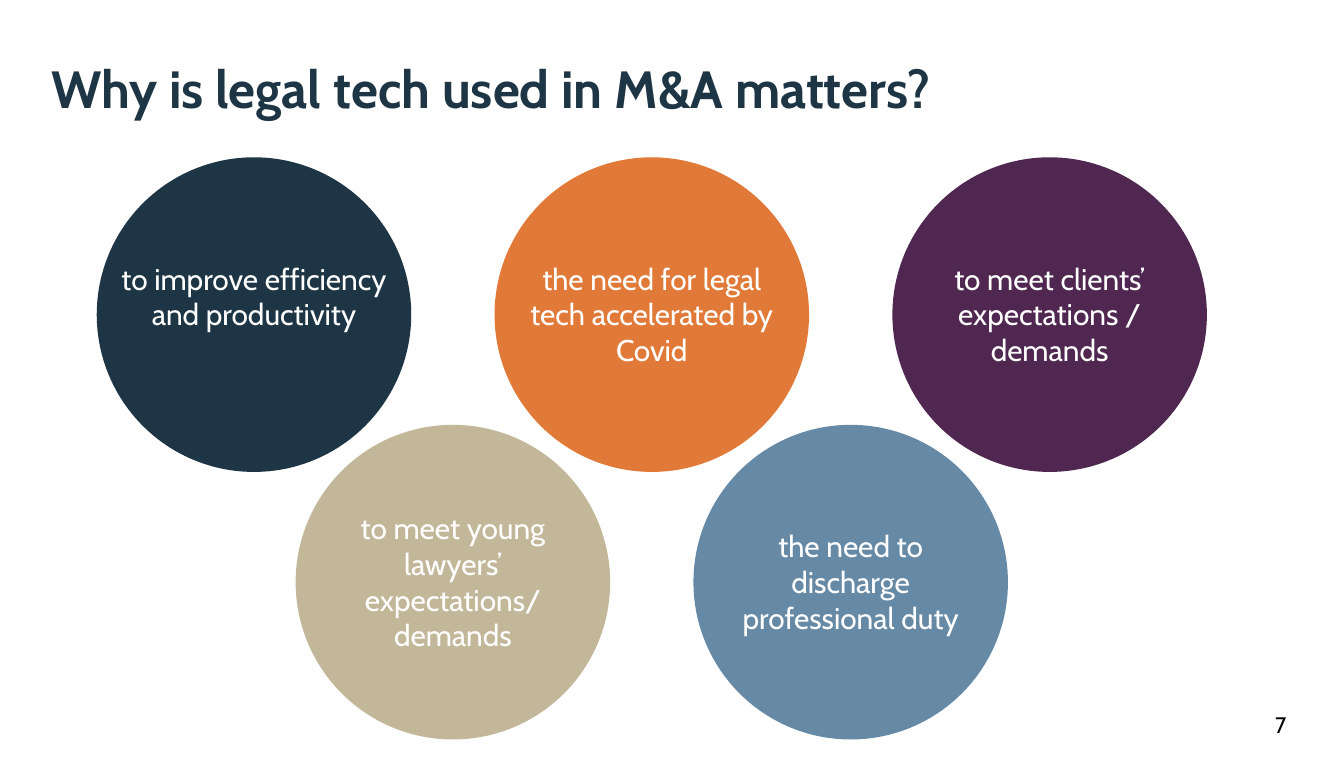
from pptx import Presentation, util as u
from pptx.dml.color import RGBColor
from pptx.enum import shapes, text

WIDTH, HEIGHT = 10, 5.63
DIAMETER = 2.34
LEFT, COLUMN_STEP = 0.72, 1.48
TOP, ROW_STEP = 1.17, 1.99
LINE_HEIGHT = 0.27
FONT = "Cabin"
NAVY, WHITE, PURPLE = "1D3544", "FFFFFF", "4F2750"

REASONS = [
    (1, 1, "C2B799", "to meet young lawyers’ expectations/ demands", 1.69, 4),
    (2, 0, "E17A38", "the need for legal tech accelerated by Covid", 1.83, 3),
    (4, 0, PURPLE, "to meet clients’ expectations / demands", 1.66, 3),
    (3, 1, "668AA6", "the need to discharge professional duty", 1.73, 3),
    (0, 0, NAVY, "to improve efficiency and productivity", 2.1, 3),
]


def color(value):
    return RGBColor.from_string(value)


def box(left, top, width, height):
    return [u.Inches(length) for length in (left, top, width, height)]


def write(frame, wording, size, ink, align, bold=False, inset=0):
    frame.word_wrap = True
    frame.auto_size = text.MSO_AUTO_SIZE.NONE
    frame.margin_left = frame.margin_right = u.Inches(inset)
    frame.margin_top = frame.margin_bottom = u.Inches(inset / 2)
    paragraph = frame.paragraphs[0]
    paragraph.alignment = align
    run = paragraph.add_run()
    run.text = wording
    run.font.name = FONT
    run.font.size = u.Pt(size)
    run.font.bold = bold
    run.font.color.rgb = color(ink)
    return paragraph


def add_title(slide, wording):
    title = slide.shapes.title
    title.left, title.top, title.width, title.height = box(0.38, 0.35, 9.29, 0.61)
    title.text_frame.vertical_anchor = text.MSO_ANCHOR.MIDDLE
    write(title.text_frame, wording, 28, NAVY, text.PP_ALIGN.LEFT, bold=True)


def add_reason(slide, column, row, fill, wording, width, lines):
    left = LEFT + column * COLUMN_STEP
    top = TOP + row * ROW_STEP
    group = slide.shapes.add_group_shape()
    circle = group.shapes.add_shape(
        shapes.MSO_SHAPE.OVAL, *box(left, top, DIAMETER, DIAMETER))
    circle.shadow.inherit = False
    circle.fill.solid()
    circle.fill.fore_color.rgb = color(fill)
    circle.line.fill.background()

    height = lines * LINE_HEIGHT
    caption = group.shapes.add_textbox(*box(
        left + (DIAMETER - width) / 2, top + (DIAMETER - height) / 2, width, height))
    if fill == PURPLE:
        caption.fill.solid()
        caption.fill.fore_color.rgb = color(fill)
    paragraph = write(caption.text_frame, wording, 16, WHITE, text.PP_ALIGN.CENTER)
    paragraph.space_after = u.Pt(6)


def add_page_number(slide, number):
    page = slide.shapes.add_textbox(*box(6.8, 5.24, 2.87, 0.17))
    write(page.text_frame, number, 12, "000000", text.PP_ALIGN.RIGHT, inset=0.1)


def main():
    deck = Presentation()
    deck.slide_width, deck.slide_height = u.Inches(WIDTH), u.Inches(HEIGHT)
    slide = deck.slides.add_slide(deck.slide_layouts[5])
    for reason in REASONS:
        add_reason(slide, *reason)
    add_title(slide, "Why is legal tech used in M&A matters?")
    add_page_number(slide, "7")
    deck.save("out.pptx")


if __name__ == "__main__":
    main()
